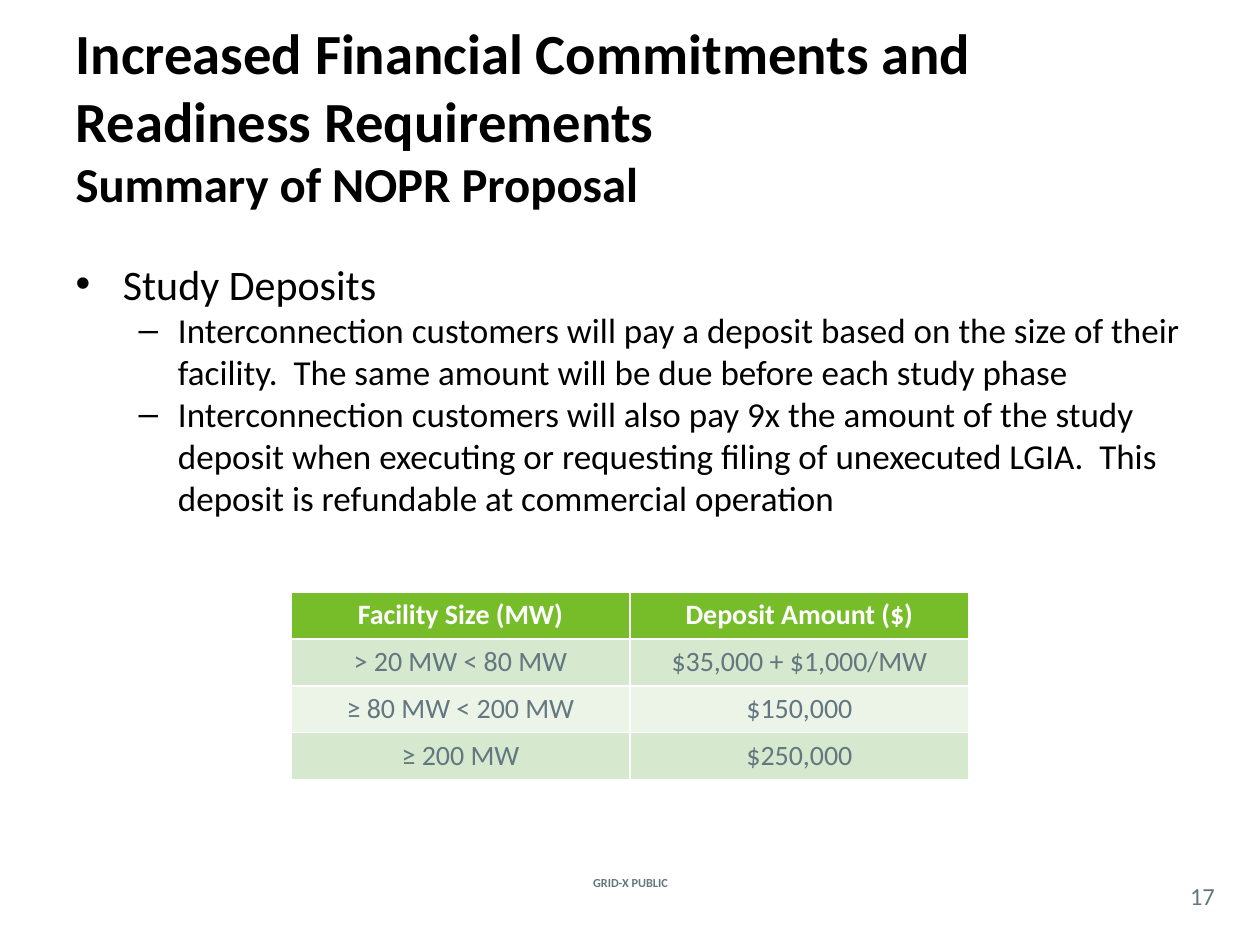
"""Build the study deposits slide."""
from dataclasses import dataclass

from pptx import Presentation
from pptx.dml.color import RGBColor as Rgb
from pptx.enum.text import MSO_ANCHOR as Anchor, MSO_AUTO_SIZE as Fit, PP_ALIGN as Align
from pptx.util import Pt

SCALE = 914400 / 126


@dataclass(frozen=True)
class Theme:
    font: str = "Calibri"
    ink: str = "000000"
    gray: str = "62777F"
    white: str = "FFFFFF"
    head: str = "77BD2A"
    bands: tuple = ("D6E8CD", "ECF4E8")
    title: float = 32.4
    sub: float = 27.9
    lead: int = 24
    point: int = 20
    cell: int = 16
    page: int = 14
    foot: int = 7


def px(*nums):
    return [round(num * SCALE) for num in nums]


def write(frame, text, size, color=Theme.ink, bold=False, align=Align.LEFT, level=0):
    para = frame.paragraphs[0]
    if para.runs:
        para = frame.add_paragraph()
    para.level = level
    para.alignment = align
    para.space_before = Pt(0)
    run = para.add_run()
    run.text = text
    run.font.name = theme.font
    run.font.size = Pt(size)
    run.font.bold = bold
    run.font.color.rgb = Rgb.from_string(color)


theme = Theme()
deck = Presentation()
deck.slide_width, deck.slide_height = px(1260, 945)
slide = deck.slides.add_slide(deck.slide_layouts[1])
title, body = slide.placeholders
for shape, box in ((title, (63, 10, 1134, 210)), (body, (63, 252, 1134, 605))):
    shape.left, shape.top, shape.width, shape.height = px(*box)
    shape.text_frame.auto_size = Fit.NONE

frame = title.text_frame
frame.vertical_anchor = Anchor.MIDDLE
write(frame, "Increased Financial Commitments and Readiness Requirements", theme.title, bold=True)
write(frame, "Summary of NOPR Proposal", theme.sub, bold=True)

points = (
    "Interconnection customers will pay a deposit based on the size of their facility.  "
    "The same amount will be due before each study phase",
    "Interconnection customers will also pay 9x the amount of the study deposit when "
    "executing or requesting filing of unexecuted LGIA.  "
    "This deposit is refundable at commercial operation",
)
write(body.text_frame, "Study Deposits", theme.lead)
for point in points:
    write(body.text_frame, point, theme.point, level=1)

rows = (
    ("Facility Size (MW)", "Deposit Amount ($)"),
    ("> 20 MW < 80 MW", "$35,000 + $1,000/MW"),
    ("≥ 80 MW < 200 MW", "$150,000"),
    ("≥ 200 MW", "$250,000"),
)
table = slide.shapes.add_table(len(rows), 2, *px(291, 592, 678, 184)).table
for r, row in enumerate(rows):
    top = r == 0
    fill = theme.head if top else theme.bands[(r - 1) % 2]
    for c, text in enumerate(row):
        cell = table.cell(r, c)
        cell.fill.solid()
        cell.fill.fore_color.rgb = Rgb.from_string(fill)
        color = theme.white if top else theme.gray
        write(cell.text_frame, text, theme.cell, color, bold=top, align=Align.CENTER)

labels = (
    ("GRID-X PUBLIC", (538, 872, 185, 21), theme.foot, True),
    ("17", (1176, 877, 53, 37), theme.page, False),
)
for text, box, size, bold in labels:
    frame = slide.shapes.add_textbox(*px(*box)).text_frame
    frame.word_wrap = True
    frame.vertical_anchor = Anchor.MIDDLE
    frame.margin_left = frame.margin_right = frame.margin_top = frame.margin_bottom = 0
    write(frame, text, size, theme.gray, bold, Align.CENTER)

deck.save("out.pptx")
